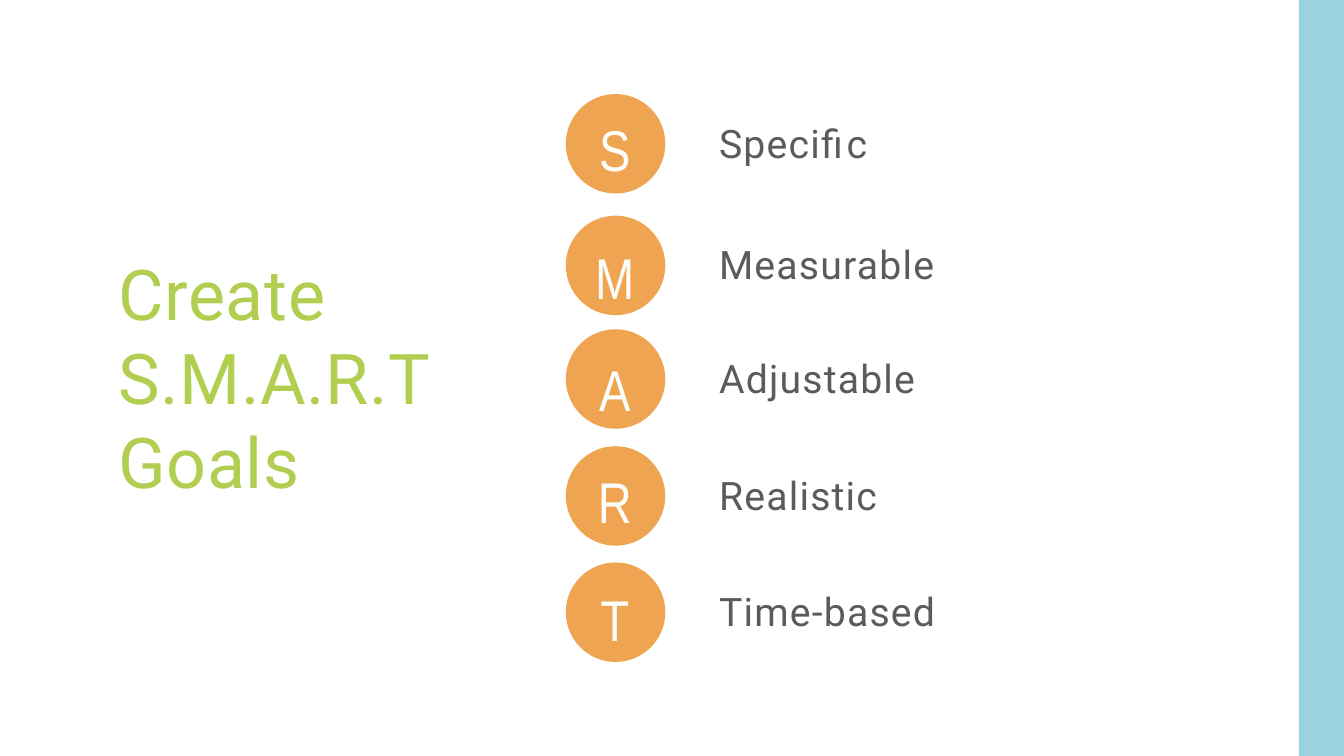
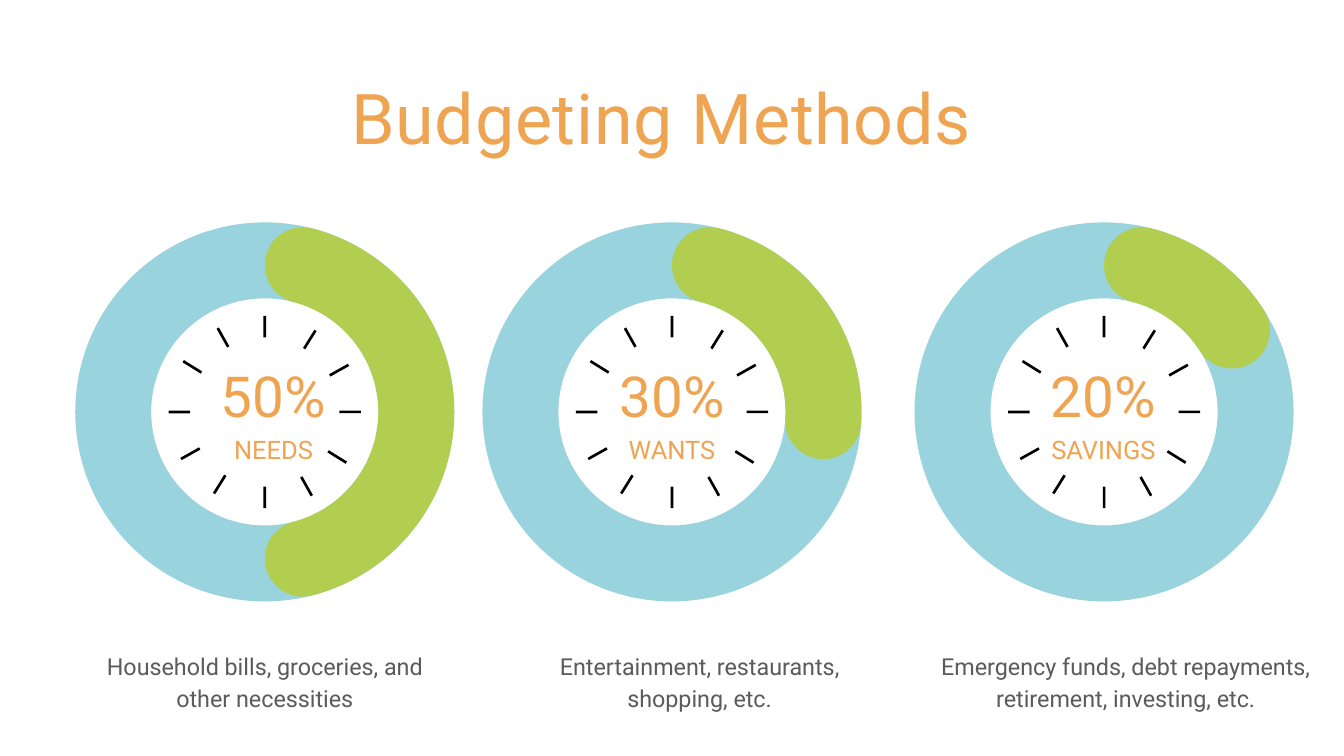
from math import asin, cos, degrees, radians, sin

from pptx import Presentation
from pptx import util as u
from pptx.dml.color import RGBColor
from pptx.enum import shapes, text

PX = 9144

WHITE = RGBColor(0xFF, 0xFF, 0xFF)
CREAM = RGBColor(0xFD, 0xFD, 0xFA)
BLACK = RGBColor(0x00, 0x00, 0x00)
GREY = RGBColor(0x5C, 0x5A, 0x5B)
ORANGE = RGBColor(0xEF, 0xA4, 0x52)
GREEN = RGBColor(0xB1, 0xCE, 0x50)
BLUE = RGBColor(0x99, 0xD3, 0xDD)

SANS = "Roboto"
NARROW = "Arial Narrow"
LEFT = text.PP_ALIGN.LEFT
CENTER = text.PP_ALIGN.CENTER

GOALS = [
    ("Specific", 140, 152),
    ("Measurable", 321, 343),
    ("Adjustable", 490, 510),
    ("Realistic", 664, 676),
    ("Time-based", 837, 852),
]
BADGE = 148

BUDGET = [
    (394, 50, "NEEDS", 407, 394, 479,
     ["Household bills, groceries, and", "other necessities"]),
    (1000, 30, "WANTS", 1000, 1041, 425,
     ["Entertainment, restaurants,", "shopping, etc."]),
    (1643, 20, "SAVINGS", 1642, 1675, 650,
     ["Emergency funds, debt repayments, retirement, investing, etc."]),
]
RING_Y = 613
OUTER = 282
INNER = 169
TICK_RADIUS = 127
TICK_ANGLES = [base + turn for turn in (0, 90, 180, 270) for base in (0, 31.9, 60.7)]


def px(*lengths):
    return [u.Emu(round(length * PX)) for length in lengths]


def polar(x, y, radius, angle):
    return x + radius * cos(radians(angle)), y + radius * sin(radians(angle))


def sweep(x, y, radius, start, end, steps=60):
    return [polar(x, y, radius, start + (end - start) * i / steps)
            for i in range(steps + 1)]


class Deck:
    def __init__(self):
        self.prs = Presentation()
        self.prs.slide_width, self.prs.slide_height = px(2000, 1125)
        self.slide = None

    def add_slide(self, title, box, color):
        self.slide = self.prs.slides.add_slide(self.prs.slide_layouts[5])
        self.slide.background.fill.solid()
        self.slide.background.fill.fore_color.rgb = WHITE
        heading = self.slide.shapes.title
        heading.left, heading.top, heading.width, heading.height = px(*box)
        self.set_lines(heading.text_frame, [(title, 75, 90)], color, spacing=80)

    def set_lines(self, frame, lines, color, font=SANS, align=LEFT, spacing=0):
        frame.word_wrap = True
        frame.auto_size = text.MSO_AUTO_SIZE.NONE
        frame.vertical_anchor = text.MSO_ANCHOR.TOP
        frame.margin_left = frame.margin_top = 0
        frame.margin_right = frame.margin_bottom = 0
        for i, (words, size, leading) in enumerate(lines):
            paragraph = frame.add_paragraph() if i else frame.paragraphs[0]
            paragraph.text = words
            paragraph.alignment = align
            paragraph.line_spacing = u.Pt(leading)
            paragraph.space_before = u.Pt(0)
            paragraph.font.name = font
            paragraph.font.size = u.Pt(size)
            paragraph.font.color.rgb = color
            if spacing:
                paragraph.font._rPr.set("spc", str(spacing))

    def label(self, box, lines, color, **style):
        frame = self.slide.shapes.add_textbox(*px(*box)).text_frame
        self.set_lines(frame, lines, color, **style)

    def paint(self, shape, color):
        shape.shadow.inherit = False
        shape.fill.solid()
        shape.fill.fore_color.rgb = color
        shape.line.fill.background()
        return shape

    def preset(self, kind, box, color):
        return self.paint(self.slide.shapes.add_shape(kind, *px(*box)), color)

    def ring(self, x, y):
        box = (x - OUTER, y - OUTER, 2 * OUTER, 2 * OUTER)
        donut = self.preset(shapes.MSO_SHAPE.DONUT, box, BLUE)
        donut.adjustments[0] = (OUTER - INNER) / (2 * OUTER)

    def share(self, x, y, percent):
        middle, cap = (OUTER + INNER) / 2, (OUTER - INNER) / 2
        inset = degrees(asin(cap / middle))
        start, end = inset - 90, percent * 3.6 - inset - 90
        outline = (sweep(x, y, OUTER, start, end)
                   + sweep(*polar(x, y, middle, end), cap, end, end + 180)
                   + sweep(x, y, INNER, end, start)
                   + sweep(*polar(x, y, middle, start), cap, start + 180, start + 360))
        points = [px(*point) for point in outline]
        builder = self.slide.shapes.build_freeform(*points[0])
        builder.add_line_segments(points[1:], close=True)
        self.paint(builder.convert_to_shape(), GREEN)

    def ticks(self, x, y):
        for angle in TICK_ANGLES:
            tick_x, tick_y = polar(x, y, TICK_RADIUS, angle)
            box = (tick_x - 16, tick_y - 2, 32, 4)
            self.preset(shapes.MSO_SHAPE.RECTANGLE, box, BLACK).rotation = angle


def add_goals(deck):
    deck.add_slide("Create S.M.A.R.T Goals", (176, 373, 491, 376), GREEN)
    deck.preset(shapes.MSO_SHAPE.RECTANGLE, (1933, 0, 67, 1125), BLUE)
    for goal, top, letter_top in GOALS:
        deck.preset(shapes.MSO_SHAPE.OVAL, (842, top, BADGE, BADGE), ORANGE)
        deck.label((1070, top + 37, 817, 71), [(goal, 42, 50.4)], GREY, spacing=130)
        deck.label((771, letter_top, 288, 115), [(goal[0], 61.5, 86.2)], CREAM,
                   font=NARROW, align=CENTER)


def add_budget(deck):
    deck.add_slide("Budgeting Methods", (523, 111, 955, 126), ORANGE)
    for x, percent, category, value_x, caption_x, caption_width, caption in BUDGET:
        deck.ring(x, RING_Y)
        deck.share(x, RING_Y, percent)
        deck.ticks(x, RING_Y)
        deck.label((value_x - 130, 520, 260, 212),
                   [(f"{percent}%", 60.6, 84.8), (category, 27.3, 38.2)],
                   ORANGE, align=CENTER)
        deck.label((caption_x - caption_width / 2, 963, caption_width, 94),
                   [(line, 25, 35) for line in caption], GREY, align=CENTER)


def main():
    deck = Deck()
    add_goals(deck)
    add_budget(deck)
    deck.prs.save("out.pptx")


if __name__ == "__main__":
    main()
